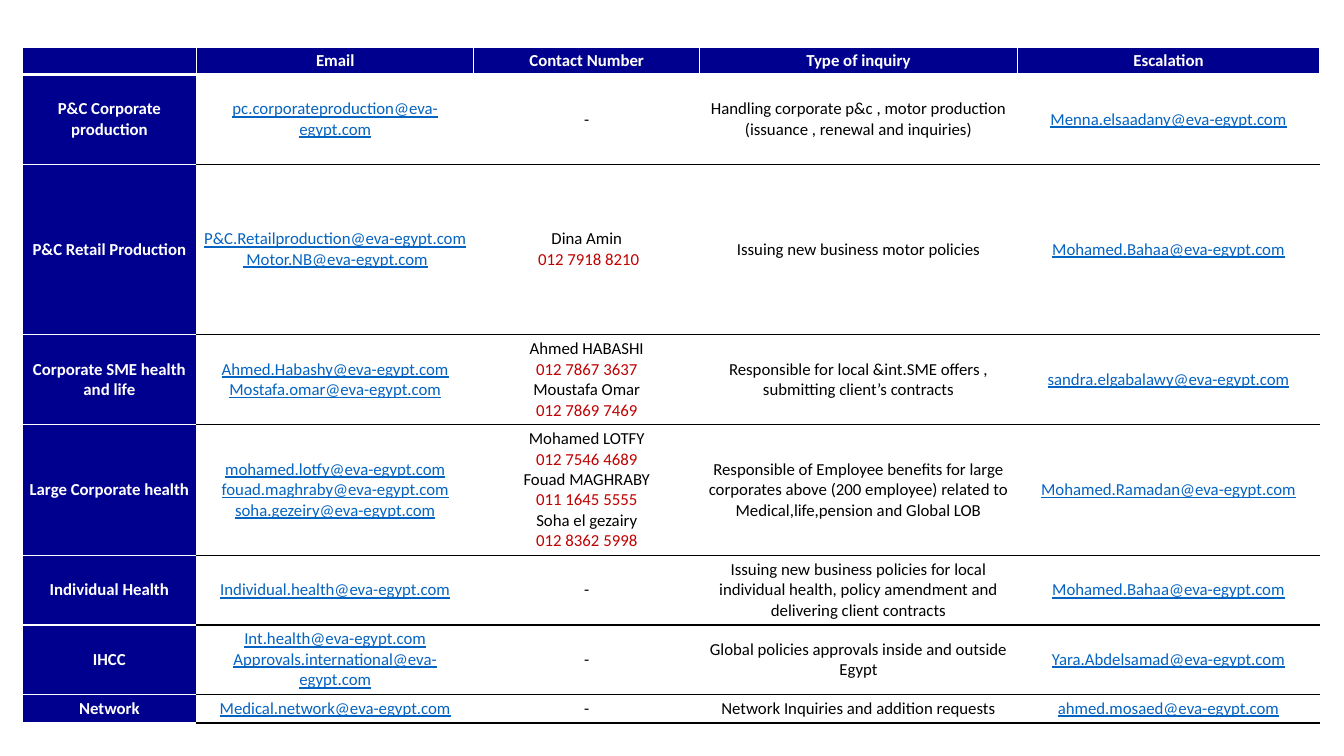
from dataclasses import dataclass
from lxml import etree
from pptx import Presentation
from pptx.dml.color import RGBColor
from pptx.enum.text import MSO_ANCHOR, PP_ALIGN
from pptx.oxml.ns import qn
from pptx.util import Inches, Pt

MIDDLE = MSO_ANCHOR.MIDDLE
CENTER = PP_ALIGN.CENTER


@dataclass(frozen=True)
class Theme:
    font: str = "Calibri"
    size: int = 12
    navy: str = "00008F"
    white: str = "FFFFFF"
    black: str = "000000"
    link: str = "0563C1"
    phone: str = "C00000"
    thin: int = 1
    thick: int = 3


THEME = Theme()

WIDTHS = [1.73, 2.75, 2.24, 3.15, 3]
HEIGHTS = [0.27, 0.89, 1.69, 0.63, 1.2, 0.63, 0.63, 0.26]

# Lines within a cell are parted by a newline.
CONTACTS = [
    ["", "Email", "Contact Number", "Type of inquiry", "Escalation"],
    ["P&C Corporate production",
     "pc.corporateproduction@eva-egypt.com",
     "-",
     "Handling corporate p&c , motor production (issuance , renewal and inquiries)",
     "Menna.elsaadany@eva-egypt.com"],
    ["P&C Retail Production",
     "P&C.Retailproduction@eva-egypt.com\n Motor.NB@eva-egypt.com",
     "Dina Amin\n 012 7918 8210",
     "Issuing new business motor policies",
     "Mohamed.Bahaa@eva-egypt.com"],
    ["Corporate SME health and life",
     "Ahmed.Habashy@eva-egypt.com\nMostafa.omar@eva-egypt.com",
     "Ahmed HABASHI\n012 7867 3637\nMoustafa Omar\n012 7869 7469",
     "Responsible for local &int.SME offers , submitting client’s contracts",
     "sandra.elgabalawy@eva-egypt.com"],
    ["Large Corporate health",
     "mohamed.lotfy@eva-egypt.com\nfouad.maghraby@eva-egypt.com\n"
     "soha.gezeiry@eva-egypt.com",
     "Mohamed LOTFY\n012 7546 4689\nFouad MAGHRABY\n011 1645 5555\n"
     "Soha el gezairy\n012 8362 5998",
     "Responsible of Employee benefits for large corporates above (200 employee) "
     "related to Medical,life,pension and Global LOB",
     "Mohamed.Ramadan@eva-egypt.com"],
    ["Individual Health",
     "Individual.health@eva-egypt.com",
     "-",
     "Issuing new business policies for local individual health, policy amendment "
     "and delivering client contracts",
     "Mohamed.Bahaa@eva-egypt.com"],
    ["IHCC",
     "Int.health@eva-egypt.com\nApprovals.international@eva-egypt.com",
     "-",
     "Global policies approvals inside and outside Egypt",
     "Yara.Abdelsamad@eva-egypt.com"],
    ["Network",
     "Medical.network@eva-egypt.com",
     "-",
     "Network Inquiries and addition requests",
     "ahmed.mosaed@eva-egypt.com"],
]


def add_edge(cell, side, color, width):
    props = cell._tc.get_or_add_tcPr()
    line = etree.SubElement(props, qn(f"a:ln{side}"), w=str(Pt(width)))
    fill = etree.SubElement(line, qn("a:solidFill"))
    etree.SubElement(fill, qn("a:srgbClr"), val=color)


def set_edges(cell, row, col):
    top = THEME.black if row > 1 and col else THEME.white
    base = THEME.black if row and col else THEME.white
    add_edge(cell, "L", THEME.white, THEME.thin)
    add_edge(cell, "R", THEME.white, THEME.thin)
    add_edge(cell, "T", top, THEME.thick if row == 1 else THEME.thin)
    add_edge(cell, "B", base, THEME.thin if row else THEME.thick)


def pick_color(line, head):
    if head:
        return THEME.white
    if "@" in line:
        return THEME.link
    return THEME.phone if line.strip()[:1].isdigit() else THEME.black


def set_text(cell, text, head):
    cell.text = text
    for para in cell.text_frame.paragraphs:
        para.alignment = CENTER
        font = para.font
        font.name = THEME.font
        font.size = Pt(THEME.size)
        font.bold = head
        font.underline = "@" in para.text
        font.color.rgb = RGBColor.from_string(pick_color(para.text, head))


def fill_cell(cell, text, row, col):
    head = row == 0 or col == 0
    set_edges(cell, row, col)
    if head:
        cell.fill.solid()
        cell.fill.fore_color.rgb = RGBColor.from_string(THEME.navy)
    else:
        cell.fill.background()
    cell.vertical_anchor = MIDDLE
    cell.margin_left = cell.margin_right = Inches(0.07 if row else 0.05)
    cell.margin_top = cell.margin_bottom = Inches(0.04 if row else 0.03)
    set_text(cell, text, head)


def add_contacts(slide):
    frame = slide.shapes.add_table(
        len(HEIGHTS), len(WIDTHS), Inches(0.22), Inches(0.47),
        Inches(sum(WIDTHS)), Inches(sum(HEIGHTS)))
    table = frame.table
    table.horz_banding = False
    for column, width in zip(table.columns, WIDTHS):
        column.width = Inches(width)
    for row, height in enumerate(HEIGHTS):
        table.rows[row].height = Inches(height)
        for col, text in enumerate(CONTACTS[row]):
            fill_cell(table.cell(row, col), text, row, col)


def main():
    deck = Presentation()
    deck.slide_width = Inches(13.33)
    deck.slide_height = Inches(7.5)
    slide = deck.slides.add_slide(deck.slide_layouts[6])
    add_contacts(slide)
    deck.save("out.pptx")


if __name__ == "__main__":
    main()
